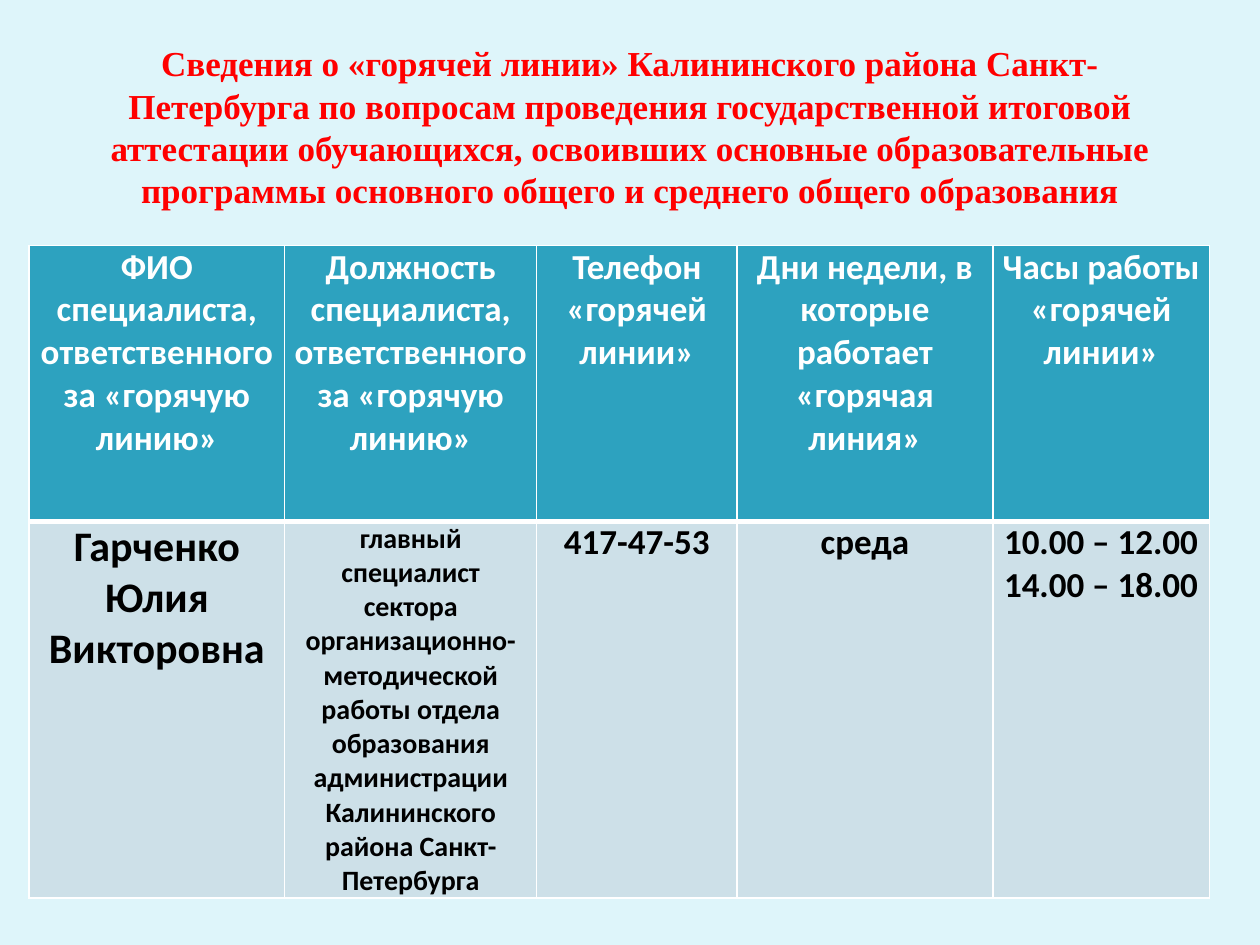
import pptx
import pptx.dml.color
import pptx.enum.text
import pptx.oxml.ns
import pptx.util
from lxml import etree

Inches = pptx.util.Inches
Pt = pptx.util.Pt
RGBColor = pptx.dml.color.RGBColor
PP_ALIGN = pptx.enum.text.PP_ALIGN
MSO_ANCHOR = pptx.enum.text.MSO_ANCHOR
qn = pptx.oxml.ns.qn

BACKGROUND = RGBColor(0xDE, 0xF5, 0xFA)
RED = RGBColor(0xFF, 0x00, 0x00)
TEAL = RGBColor(0x2D, 0xA2, 0xBF)
PALE_BLUE = RGBColor(0xCD, 0xE0, 0xE8)
WHITE = RGBColor(0xFF, 0xFF, 0xFF)
BLACK = RGBColor(0x00, 0x00, 0x00)

HEADING = (
    "Сведения о «горячей линии» Калининского района Санкт-Петербурга "
    "по вопросам проведения государственной итоговой аттестации обучающихся, "
    "освоивших основные образовательные программы основного общего "
    "и среднего общего образования"
)

# Each column: width in inches, header, contact detail, detail size in points
COLUMNS = [
    (2.03, "ФИО специалиста, ответственного за «горячую линию»",
     "Гарченко Юлия Викторовна", 24),
    (2, "Должность специалиста, ответственного за «горячую линию»",
     "главный специалист сектора организационно-методической работы отдела "
     "образования администрации Калининского района Санкт-Петербурга", 16),
    (1.59, "Телефон «горячей линии»", "417-47-53", 20),
    (2.03, "Дни недели, в которые работает «горячая линия»", "среда", 20),
    (1.72, "Часы работы «горячей линии»", "10.00 – 12.00\n14.00 – 18.00", 20),
]
ROW_HEIGHTS = (2.19, 2.56)


def format_text(text_frame, font_name, size, color):
    for paragraph in text_frame.paragraphs:
        paragraph.alignment = PP_ALIGN.CENTER
        for run in paragraph.runs:
            run.font.name = font_name
            run.font.size = Pt(size)
            run.font.bold = True
            run.font.color.rgb = color


def add_borders(cell, widths):
    """Draw white borders; widths are points for left, right, top, bottom."""
    properties = cell._tc.get_or_add_tcPr()
    for side, width in zip("LRTB", widths):
        line = etree.SubElement(properties, qn(f"a:ln{side}"), w=str(Pt(width)))
        fill = etree.SubElement(line, qn("a:solidFill"))
        etree.SubElement(fill, qn("a:srgbClr"), val=str(WHITE))


def fill_cell(cell, text, size, color, background, border_widths):
    cell.margin_left = cell.margin_right = Inches(0.07)
    cell.margin_top = cell.margin_bottom = 0
    cell.vertical_anchor = MSO_ANCHOR.TOP
    cell.text_frame.text = text
    format_text(cell.text_frame, "Calibri", size, color)
    # Borders come before the fill in the cell properties
    add_borders(cell, border_widths)
    cell.fill.solid()
    cell.fill.fore_color.rgb = background


def place_heading(slide, left, top, width, height):
    heading = slide.shapes.title
    heading.left, heading.top = Inches(left), Inches(top)
    heading.width, heading.height = Inches(width), Inches(height)
    frame = heading.text_frame
    frame.text = HEADING
    frame.word_wrap = True
    frame.auto_size = pptx.enum.text.MSO_AUTO_SIZE.NONE
    frame.vertical_anchor = MSO_ANCHOR.MIDDLE
    frame.margin_bottom = Inches(0.3)
    frame.paragraphs[0].line_spacing = Pt(24)
    format_text(frame, "Times New Roman", 20, RED)


def place_hotline_table(slide, left, top):
    total_width = sum(column[0] for column in COLUMNS)
    hotline = slide.shapes.add_table(
        len(ROW_HEIGHTS), len(COLUMNS), Inches(left), Inches(top),
        Inches(total_width), Inches(sum(ROW_HEIGHTS))).table
    for row, height in zip(hotline.rows, ROW_HEIGHTS):
        row.height = Inches(height)
    for index, (width, header, detail, size) in enumerate(COLUMNS):
        hotline.columns[index].width = Inches(width)
        fill_cell(hotline.cell(0, index), header, 20, WHITE, TEAL, (1, 1, 1, 3))
        fill_cell(hotline.cell(1, index), detail, size, BLACK, PALE_BLUE, (1, 1, 3, 1))


def main():
    presentation = pptx.Presentation()
    presentation.slide_width = Inches(10)
    presentation.slide_height = Inches(7.5)
    slide = presentation.slides.add_slide(presentation.slide_layouts[5])
    slide.background.fill.solid()
    slide.background.fill.fore_color.rgb = BACKGROUND

    place_heading(slide, 0.5, 0.3, 9, 1.65)
    place_hotline_table(slide, 0.23, 1.95)
    presentation.save("out.pptx")


if __name__ == "__main__":
    main()
